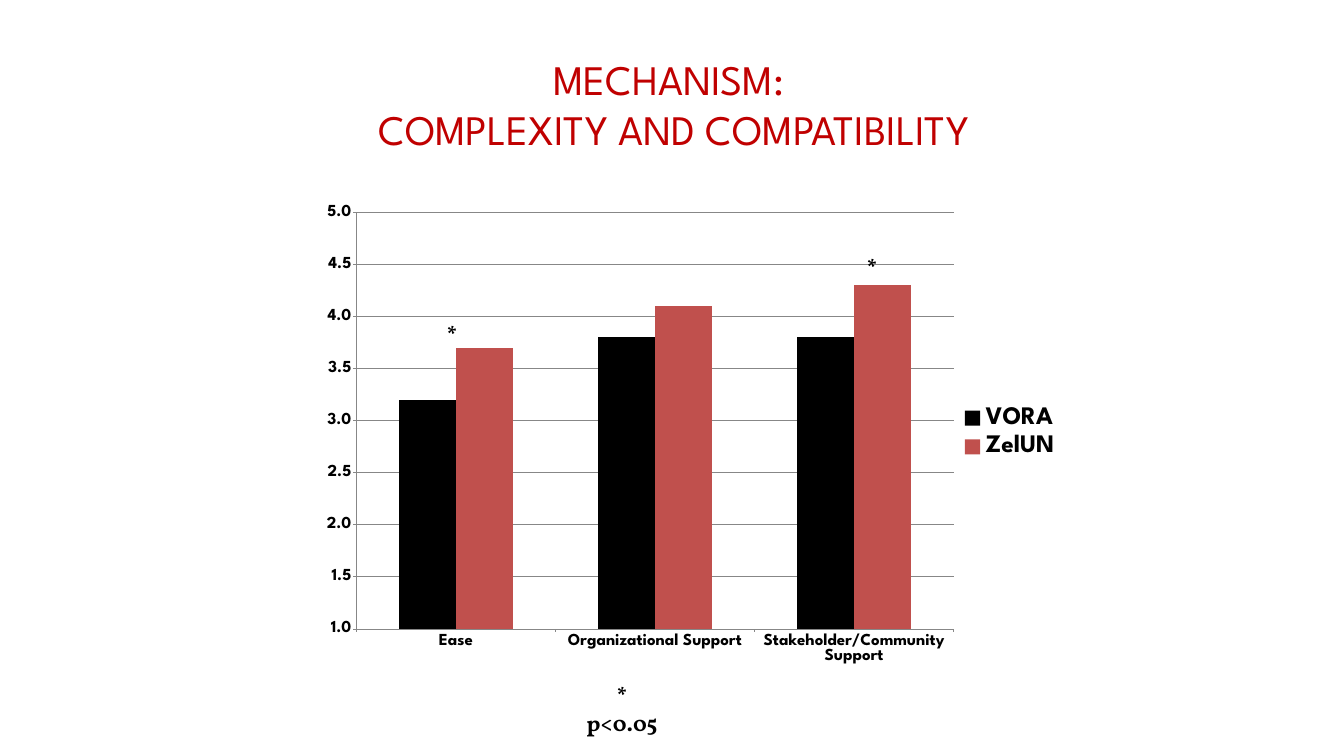
"""Builds the slide comparing complexity and compatibility ratings of two programs."""
from lxml import etree
from pptx import Presentation
from pptx.chart.data import CategoryChartData
from pptx.dml.color import RGBColor
from pptx.enum.chart import XL_CHART_TYPE as ChartType, XL_LEGEND_POSITION as LegendSide, XL_TICK_MARK as Tick
from pptx.enum.text import MSO_ANCHOR as Anchor, MSO_AUTO_SIZE as AutoSize, PP_ALIGN as Align
from pptx.oxml.ns import qn
from pptx.util import Pt

PX = 18143
COLORS = {"title": "C00000", "text": "000000", "VORA": "000000", "ZelUN": "C0504D", "grid": "878787"}
HEADING, NOTE = "League Spartan", "Vollkorn"
CATEGORIES = ["Ease", "Organizational Support", "Stakeholder/Community Support"]
SERIES = {"VORA": (3.2, 3.8, 3.8), "ZelUN": (3.7, 4.1, 4.3)}
PLOT = {"x": 0.06, "y": 0.04, "w": 0.79, "h": 0.87}
MARKS = [("* p<0.05", 581, 680, 82), ("*", 442, 319, 20), ("*", 862, 252, 20)]


def assign(target, **values):
    for name, value in values.items():
        setattr(target, name, value)


class SlideBuilder:
    def __init__(self, deck):
        self.slide = deck.slides.add_slide(deck.slide_layouts[5])

    def font(self, font, size, name=HEADING, bold=True, color="text"):
        assign(font, size=Pt(size), name=name, bold=bold)
        font.color.rgb = RGBColor.from_string(COLORS[color])

    def line(self, line):
        line.color.rgb = RGBColor.from_string(COLORS["grid"])
        line.width = Pt(0.75)

    def title(self, text, left, top, width, height):
        box = self.slide.shapes.title
        assign(box, left=left * PX, top=top * PX, width=width * PX, height=height * PX)
        box.text_frame.text = text
        assign(box.text_frame, auto_size=AutoSize.NONE, vertical_anchor=Anchor.TOP, word_wrap=True)
        para = box.text_frame.paragraphs[0]
        para.alignment = Align.CENTER
        for span in para.runs:
            self.font(span.font, 60, bold=False, color="title")

    def mark(self, text, left, top, width):
        box = self.slide.shapes.add_textbox(left * PX, top * PX, width * PX, 32 * PX)
        assign(box.text_frame, word_wrap=True, margin_left=0, margin_right=0)
        para = box.text_frame.paragraphs[0]
        para.alignment = Align.CENTER
        span = para.add_run()
        span.text = text
        self.font(span.font, 32, NOTE)

    def plot_layout(self, chart):
        area = chart.element.find(".//" + qn("c:plotArea"))
        for old in area.findall(qn("c:layout")):
            area.remove(old)
        layout = etree.Element(qn("c:layout"))
        manual = etree.SubElement(layout, qn("c:manualLayout"))
        values = {"layoutTarget": "inner", "xMode": "edge", "yMode": "edge", **PLOT}
        for name, value in values.items():
            etree.SubElement(manual, qn("c:" + name)).set("val", str(value))
        area.insert(0, layout)

    def chart(self, left, top, width, height):
        data = CategoryChartData(number_format="0.0")
        data.categories = CATEGORIES
        for name, values in SERIES.items():
            data.add_series(name, values)
        frame = self.slide.shapes.add_chart(
            ChartType.COLUMN_CLUSTERED, left * PX, top * PX, width * PX, height * PX, data)
        chart = frame.chart
        assign(chart, has_title=False, has_legend=True)
        self.font(chart.font, 10, "Calibri", False)
        assign(chart.legend, position=LegendSide.RIGHT, include_in_layout=False)
        self.font(chart.legend.font, 36)
        assign(chart.plots[0], gap_width=150, overlap=0, vary_by_categories=False)
        for series in chart.plots[0].series:
            series.format.fill.solid()
            series.format.fill.fore_color.rgb = RGBColor.from_string(COLORS[series.name])
        for axis in (chart.category_axis, chart.value_axis):
            axis.major_tick_mark = Tick.OUTSIDE
            self.font(axis.tick_labels.font, 24)
            self.line(axis.format.line)
        axis = chart.value_axis
        assign(axis, minimum_scale=1, maximum_scale=5, major_unit=0.5, has_major_gridlines=True)
        assign(axis.tick_labels, number_format="0.0", number_format_is_linked=False)
        self.line(axis.major_gridlines.format.line)
        self.plot_layout(chart)


def main():
    deck = Presentation()
    assign(deck, slide_width=1344 * PX, slide_height=756 * PX)
    builder = SlideBuilder(deck)
    builder.chart(311, 193, 756, 479)
    for mark in MARKS:
        builder.mark(*mark)
    builder.title("MECHANISM: \vCOMPLEXITY AND COMPATIBILITY", 128, 51, 1092, 92)
    deck.save("out.pptx")


if __name__ == "__main__":
    main()
